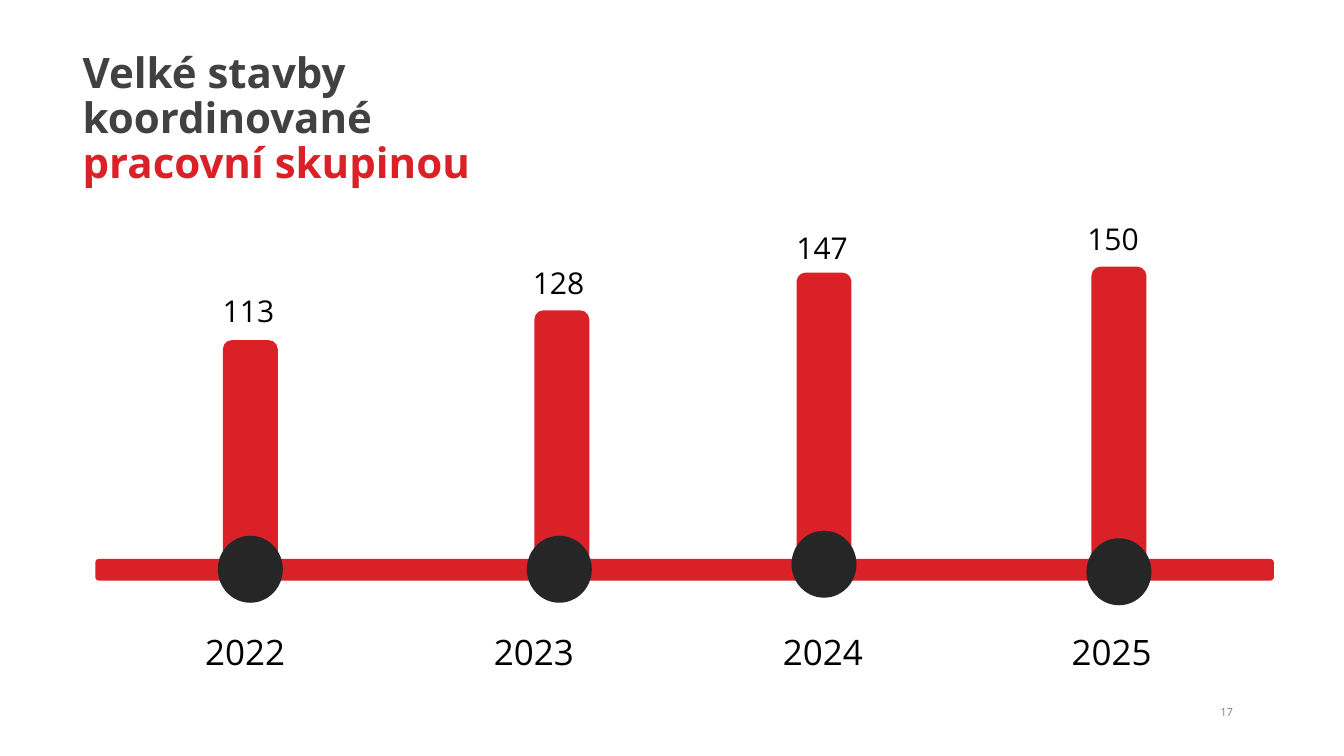
from dataclasses import dataclass

from pptx import Presentation
from pptx.dml.color import RGBColor
from pptx.enum.shapes import MSO_SHAPE
from pptx.enum.text import MSO_ANCHOR, PP_ALIGN
from pptx.util import Inches, Pt


@dataclass(frozen=True)
class Theme:
    """Colours and type sizes of the slide."""
    font: str = "Open Sans"
    red: str = "DA2128"
    dark: str = "262626"
    heading: str = "414142"
    grey: str = "808285"
    black: str = "000000"
    title_size: float = 60
    year_size: float = 50
    value_size: float = 42.9
    number_size: float = 16
    line_spacing: float = 0.89


@dataclass(frozen=True)
class Milestone:
    """One year with its value and the places of its parts."""
    year: str
    value: int
    bar_left: float
    dot_left: float
    dot_top: float
    label_left: float
    label_top: float


THEME = Theme()
MILESTONES = [
    Milestone("2022", 113, 4.42, 4.32, 10.63, 4.32, 5.84),
    Milestone("2023", 128, 10.6, 10.45, 10.63, 10.47, 5.29),
    Milestone("2024", 147, 15.8, 15.7, 10.53, 15.7, 4.59),
    Milestone("2025", 150, 21.65, 21.55, 10.68, 21.47, 4.41),
]


def add_text(slide, box, runs, size, color=THEME.black, bold=False, inset=None,
             wrap=True, align=PP_ALIGN.LEFT, anchor=MSO_ANCHOR.TOP):
    """Place text, given as a string or as (text, colour) pairs, in a box."""
    shape = slide.shapes.add_textbox(*map(Inches, box))
    frame = shape.text_frame
    frame.word_wrap = wrap
    frame.vertical_anchor = anchor
    if inset is not None:
        frame.margin_left = frame.margin_right = Inches(inset)
        frame.margin_top = frame.margin_bottom = Inches(inset)
    paragraph = frame.paragraphs[0]
    paragraph.alignment = align
    paragraph.line_spacing = THEME.line_spacing
    for text, run_color in [(runs, color)] if isinstance(runs, str) else runs:
        for index, line in enumerate(text.split("\n")):
            if index:
                paragraph.add_line_break()
            if line:
                run = paragraph.add_run()
                run.text = line
                run.font.name = THEME.font
                run.font.size = Pt(size)
                run.font.bold = bold
                run.font.color.rgb = RGBColor.from_string(run_color)
    return shape


def add_block(slide, kind, box, color):
    """Place a plain filled shape in a box."""
    shape = slide.shapes.add_shape(kind, *map(Inches, box))
    shape.shadow.inherit = False
    shape.fill.solid()
    shape.fill.fore_color.rgb = RGBColor.from_string(color)
    shape.line.fill.background()
    return shape


def add_title(slide, box):
    """Place the two-colour heading."""
    runs = [("Velké stavby\nkoordinované\n", THEME.heading),
            ("pracovní skupinou", THEME.red)]
    add_text(slide, box, runs, THEME.title_size, bold=True, inset=0)


def add_timeline(slide, box, milestones):
    """Place bars, axis, dots, years and values along the axis box."""
    left, top, width, height = box
    base = top + 0.11
    unit = 0.0394
    for milestone in milestones:
        bar_height = milestone.value * unit
        bar = (milestone.bar_left, base - bar_height, 1.09, bar_height)
        add_block(slide, MSO_SHAPE.ROUNDED_RECTANGLE, bar, THEME.red)
    add_block(slide, MSO_SHAPE.ROUNDED_RECTANGLE, box, THEME.red)
    for index, milestone in enumerate(milestones):
        dot = (milestone.dot_left, milestone.dot_top, 1.29, 1.33)
        year = (left + 2.08 + 5.73 * index, top + 1.47, 2.81, 0.94)
        label = (milestone.label_left, milestone.label_top, 1.26, 0.82)
        add_block(slide, MSO_SHAPE.OVAL, dot, THEME.dark)
        add_text(slide, year, milestone.year, THEME.year_size)
        add_text(slide, label, str(milestone.value), THEME.value_size, wrap=False)


def add_page_number(slide, box):
    """Place the page number."""
    add_text(slide, box, "17", THEME.number_size, color=THEME.grey, inset=0,
             align=PP_ALIGN.RIGHT, anchor=MSO_ANCHOR.MIDDLE)


def main():
    """Build and save the slide."""
    presentation = Presentation()
    presentation.slide_width = Inches(26.66)
    presentation.slide_height = Inches(15)
    slide = presentation.slides.add_slide(presentation.slide_layouts[6])
    add_timeline(slide, (1.89, 11.09, 23.38, 0.43), MILESTONES)
    add_title(slide, (1.64, 1.04, 22.81, 2.9))
    add_page_number(slide, (22.96, 13.74, 1.5, 0.8))
    presentation.save("out.pptx")


if __name__ == "__main__":
    main()
